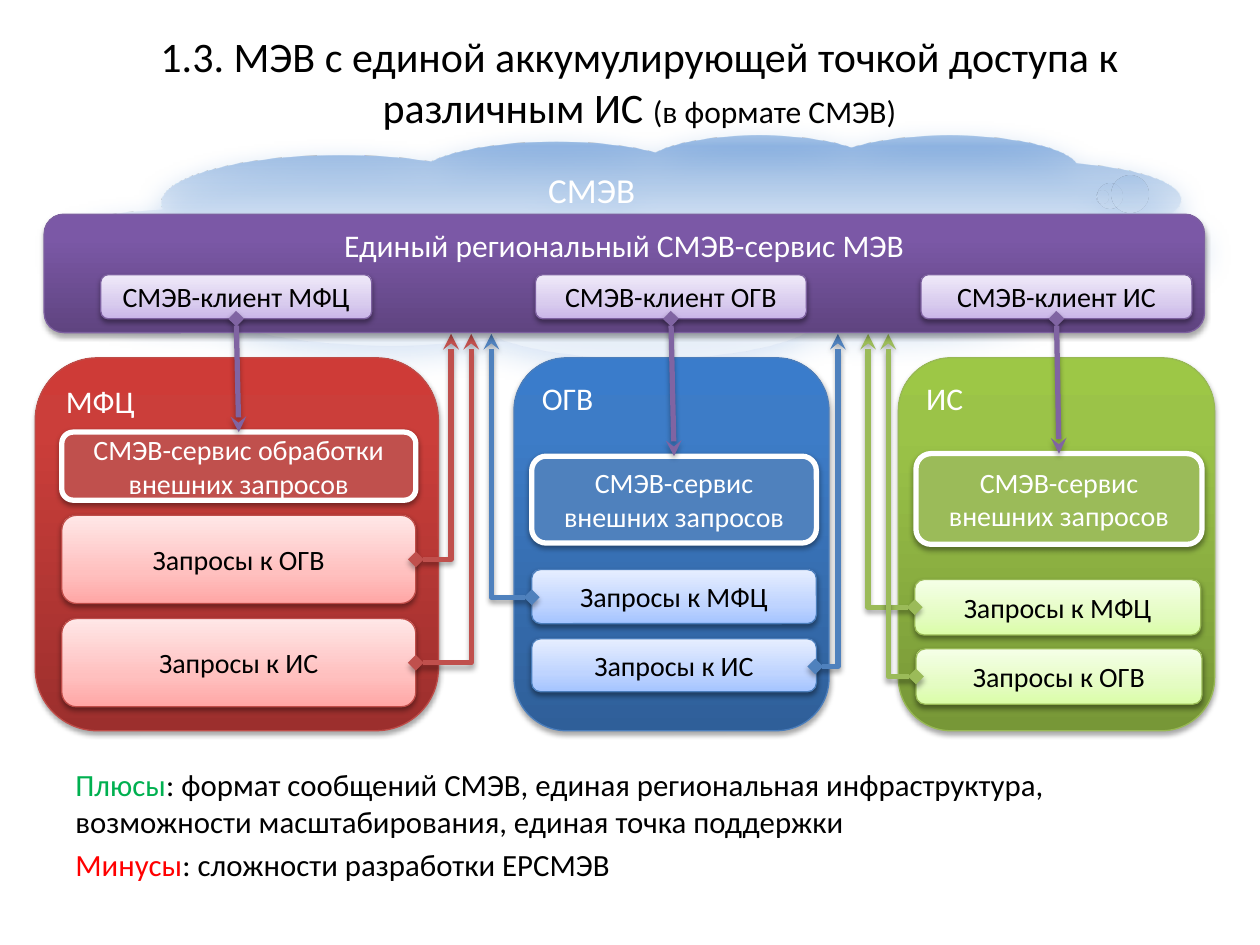
from dataclasses import dataclass
from typing import Any

from lxml.etree import SubElement
from pptx import Presentation
from pptx.dml.color import RGBColor
from pptx.enum.shapes import MSO_CONNECTOR, MSO_SHAPE
from pptx.enum.text import MSO_ANCHOR, PP_ALIGN
from pptx.oxml.ns import qn
from pptx.util import Inches, Pt

FONT = "Calibri"
COLORS = {
    "white": "FFFFFF", "black": "000000", "plus": "00B050", "minus": "FF0000",
    "red": "C0504D", "blue": "4F81BD", "green": "9BBB59", "purple": "8064A2",
    "red_line": "BF4C48", "blue_line": "4B7EBC", "green_line": "98B955",
    "purple_line": "7D60A0", "cloud_shadow": "8EB4E3",
}
DARK = {
    "red": ["9C2F2D", "CB3E3A", "CE3B37"], "blue": ["2F5F99", "3D7CC7", "3A7CCB"],
    "green": ["779737", "9BC348", "9DC746"], "purple": ["5F4480", "7B58A6", "7C57A8"],
}
LIGHT = {
    "red": ["FFA6A5", "FFC0BF", "FFE7E7"], "blue": ["A4C4FF", "BFD4FF", "E6EEFF"],
    "green": ["DAFDA7", "E4FCC2", "F5FFE7"], "purple": ["C9B5E8", "D8CBEE", "F0EAF9"],
}
CLOUD_STOPS = [(48, "FFFFFF", 37), (83, "A0BFE4", 72), (95, "6A9BD7", 68), (100, "79A6DB", 65)]


@dataclass
class Item:
    text: str
    left: float
    top: float
    width: float
    height: float


@dataclass
class Panel:
    color: str
    frame: Item
    service: Item
    requests: list[Item]
    client: Item


@dataclass
class Route:
    color: str
    start: tuple[float, float]
    end_left: float


PANELS = [
    Panel("red", Item("МФЦ", 0.28, 2.84, 3.2, 2.96),
          Item("СМЭВ-сервис обработки внешних запросов", 0.49, 3.43, 2.81, 0.54),
          [Item("Запросы к ОГВ", 0.49, 4.09, 2.81, 0.7), Item("Запросы к ИС", 0.49, 4.91, 2.81, 0.7)],
          Item("СМЭВ-клиент МФЦ", 0.8, 2.18, 2.15, 0.35)),
    Panel("blue", Item("ОГВ", 4.08, 2.84, 2.5, 2.96),
          Item("СМЭВ-сервис внешних запросов", 4.22, 3.62, 2.26, 0.69),
          [Item("Запросы к МФЦ", 4.22, 4.52, 2.26, 0.43), Item("Запросы к ИС", 4.22, 5.07, 2.26, 0.42)],
          Item("СМЭВ-клиент ОГВ", 4.25, 2.18, 2.15, 0.35)),
    Panel("green", Item("ИС", 7.13, 2.84, 2.51, 2.96),
          Item("СМЭВ-сервис внешних запросов", 7.27, 3.6, 2.27, 0.72),
          [Item("Запросы к МФЦ", 7.26, 4.6, 2.27, 0.44), Item("Запросы к ОГВ", 7.27, 5.15, 2.27, 0.44)],
          Item("СМЭВ-клиент ИС", 7.31, 2.18, 2.15, 0.35)),
]
ROUTES = [
    Route("blue", (4.22, 4.74), 3.9), Route("green", (7.26, 4.82), 6.89),
    Route("red", (3.3, 4.44), 3.58), Route("red", (3.3, 5.26), 3.74),
    Route("green", (7.27, 5.37), 7.05), Route("blue", (6.47, 5.29), 6.65),
]
ROUTE_TOP = 2.65


def rgb(name: str) -> RGBColor:
    return RGBColor.from_string(COLORS[name])


def add_color(parent: Any, value: str, alpha: int) -> None:
    color = SubElement(parent, qn("a:srgbClr"), val=value)
    SubElement(color, qn("a:alpha"), val=str(alpha * 1000))


def fill_gradient(shape: Any, stops: list[tuple[int, str, int]]) -> None:
    shape.fill.gradient()
    shape.fill.gradient_angle = 90
    stop_list = shape._element.spPr.find(f".//{qn('a:gsLst')}")
    for stop in list(stop_list):
        stop_list.remove(stop)
    for position, value, alpha in stops:
        add_color(SubElement(stop_list, qn("a:gs"), pos=str(position * 1000)), value, alpha)


def add_shadow(effects: Any, color: str, alpha: int, blur: float, distance: float) -> None:
    shadow = SubElement(effects, qn("a:outerShdw"), blurRad=str(Pt(blur)),
                        dist=str(Pt(distance)), dir="5400000", rotWithShape="0")
    add_color(shadow, COLORS[color], alpha)


def set_shadow(shape: Any, color: str, alpha: int, blur: float, distance: float) -> None:
    shape.shadow.inherit = False
    add_shadow(shape._element.spPr.find(qn("a:effectLst")), color, alpha, blur, distance)


def format_span(span: Any, size: float, color: str) -> None:
    span.font.name = FONT
    span.font.size = Pt(size)
    span.font.color.rgb = rgb(color)


def place(shapes: Any, item: Item, preset: MSO_SHAPE, size: float, color: str,
          align: PP_ALIGN, anchor: MSO_ANCHOR) -> Any:
    shape = shapes.add_shape(preset, Inches(item.left), Inches(item.top),
                             Inches(item.width), Inches(item.height))
    frame = shape.text_frame
    frame.text = item.text
    frame.word_wrap = True
    frame.vertical_anchor = anchor
    frame.paragraphs[0].alignment = align
    format_span(frame.paragraphs[0].runs[0], size, color)
    return shape


def add_frame(shapes: Any, item: Item, color: str, align: PP_ALIGN) -> None:
    shape = place(shapes, item, MSO_SHAPE.ROUNDED_RECTANGLE, 18, "white", align, MSO_ANCHOR.TOP)
    fill_gradient(shape, [(pos, value, 100) for pos, value in zip((0, 80, 100), DARK[color])])
    shape.line.color.rgb = rgb(f"{color}_line")
    shape.line.width = Pt(0.75)
    set_shadow(shape, "black", 35, 3.1, 1.8)


def add_button(shapes: Any, item: Item, color: str, solid: bool = False) -> Any:
    shape = place(shapes, item, MSO_SHAPE.ROUNDED_RECTANGLE, 16, "white" if solid else "black",
                  PP_ALIGN.CENTER, MSO_ANCHOR.MIDDLE)
    if solid:
        shape.fill.solid()
        shape.fill.fore_color.rgb = rgb(color)
    else:
        fill_gradient(shape, [(pos, value, 100) for pos, value in zip((0, 35, 100), LIGHT[color])])
    shape.line.color.rgb = rgb("white" if solid else f"{color}_line")
    shape.line.width = Pt(3 if solid else 0.75)
    set_shadow(shape, "black", 38, 3.1, 1.6)
    return shape


def add_cloud(shapes: Any) -> None:
    cloud = place(shapes, Item("СМЭВ", 0.47, 1.07, 9.1, 1.77), MSO_SHAPE.CLOUD_CALLOUT, 20,
                  "white", PP_ALIGN.CENTER, MSO_ANCHOR.TOP)
    cloud.adjustments[0], cloud.adjustments[1] = 0.41, -0.22
    cloud.text_frame.margin_top = 0
    fill_gradient(cloud, CLOUD_STOPS)
    cloud.line.fill.background()
    set_shadow(cloud, "cloud_shadow", 88, 15, 6)


def add_arrow(shapes: Any, kind: MSO_CONNECTOR, start: tuple[float, float],
              end: tuple[float, float], color: str) -> Any:
    arrow = shapes.add_connector(kind, *(Inches(value) for value in (*start, *end)))
    arrow.line.color.rgb = rgb(color)
    arrow.line.width = Pt(3)
    line = arrow.line._get_or_add_ln()
    SubElement(line, qn("a:headEnd"), type="diamond")
    SubElement(line, qn("a:tailEnd"), type="stealth")
    add_shadow(SubElement(arrow._element.spPr, qn("a:effectLst")), "black", 35, 3.1, 1.8)
    return arrow


def add_text(shapes: Any, area: tuple[float, float, float, float],
             lines: list[list[tuple[str, float, str]]]) -> Any:
    box = shapes.add_textbox(*(Inches(value) for value in area))
    box.text_frame.word_wrap = True
    for index, parts in enumerate(lines):
        para = box.text_frame.paragraphs[0] if index == 0 else box.text_frame.add_paragraph()
        for text, size, color in parts:
            span = para.add_run()
            span.text = text
            format_span(span, size, color)
    return box


def main() -> None:
    deck = Presentation()
    deck.slide_width, deck.slide_height = Inches(10), Inches(7.5)
    page = deck.slides.add_slide(deck.slide_layouts[6])
    shapes = page.shapes

    add_cloud(shapes)
    title = add_text(shapes, (0.35, 0.3, 9.45, 0.69), [[
        ("1.3. МЭВ с единой аккумулирующей точкой доступа к различным ИС ", 24, "black"),
        ("(в формате СМЭВ)", 18, "black")]])
    title.text_frame.vertical_anchor = MSO_ANCHOR.MIDDLE
    title.text_frame.paragraphs[0].alignment = PP_ALIGN.CENTER

    services = []
    for panel in PANELS:
        group = shapes.add_group_shape()
        add_frame(group.shapes, panel.frame, panel.color, PP_ALIGN.LEFT)
        services.append(add_button(group.shapes, panel.service, panel.color, solid=True))
        for request in panel.requests:
            add_button(group.shapes, request, panel.color)

    for route in ROUTES:
        arrow = add_arrow(shapes, MSO_CONNECTOR.ELBOW, route.start,
                          (route.end_left, ROUTE_TOP), route.color)
        arrow._element.spPr.find(qn("a:prstGeom")).set("prst", "bentConnector2")

    summary = add_text(shapes, (0.5, 6.03, 9, 0.94), [
        [("Плюсы", 17.6, "plus"),
         (": формат сообщений СМЭВ, единая региональная инфраструктура, "
          "возможности масштабирования, единая точка поддержки", 17.6, "black")],
        [("Минусы", 17.6, "minus"), (": сложности разработки ЕРСМЭВ", 17.6, "black")]])
    for para in summary.text_frame.paragraphs:
        para.space_before = Pt(3.5)

    add_frame(shapes, Item("Единый региональный СМЭВ-сервис МЭВ", 0.35, 1.7, 9.21, 0.94),
              "purple", PP_ALIGN.CENTER)
    clients = [add_button(shapes, panel.client, "purple") for panel in PANELS]
    for client, service in zip(clients, services):
        arrow = add_arrow(shapes, MSO_CONNECTOR.STRAIGHT, (0, 0), (1, 1), "purple")
        arrow.begin_connect(client, 2)
        arrow.end_connect(service, 0)

    deck.save("out.pptx")


if __name__ == "__main__":
    main()
